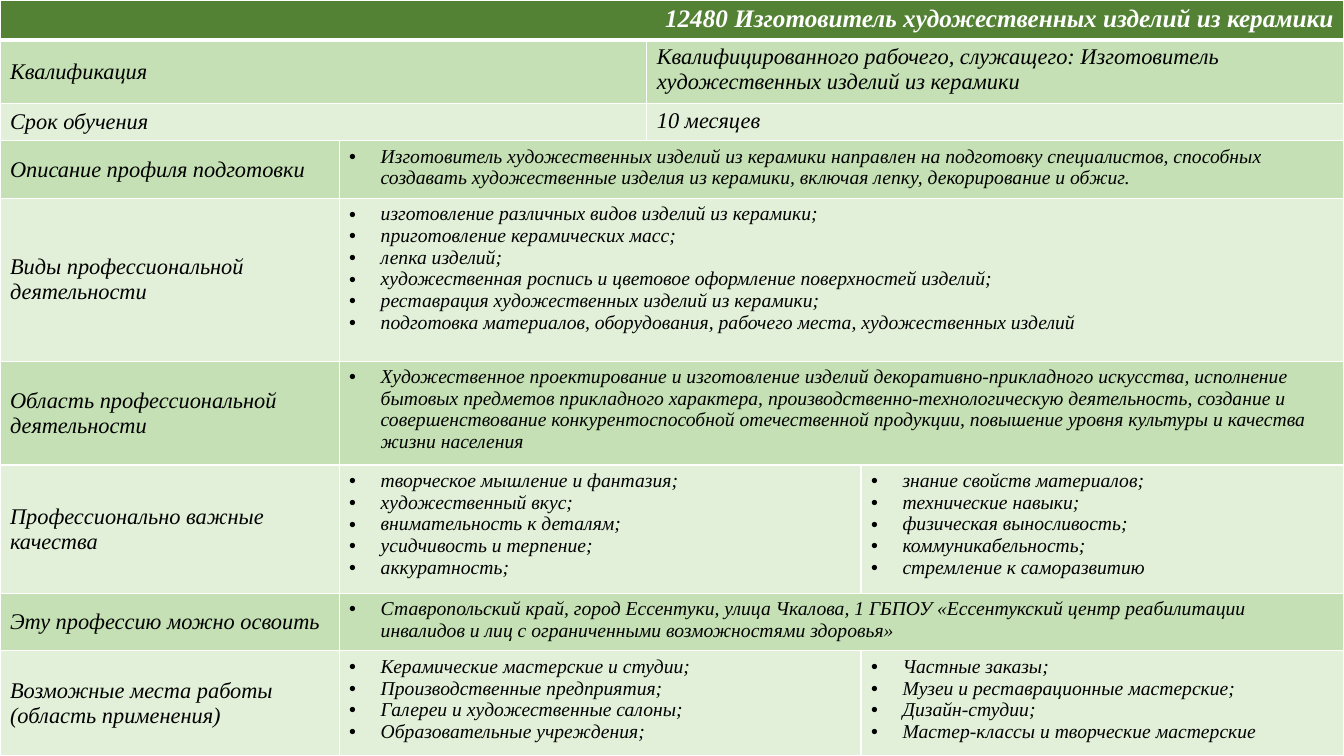
from lxml import etree
from pptx import Presentation
from pptx.dml.color import RGBColor
from pptx.enum.text import MSO_ANCHOR, PP_ALIGN
from pptx.oxml.ns import qn
from pptx.util import Pt

PX = 9525
MIDDLE, TOP = MSO_ANCHOR.MIDDLE, MSO_ANCHOR.TOP
RIGHT, LEFT = PP_ALIGN.RIGHT, PP_ALIGN.LEFT
WHITE = RGBColor(0xFF, 0xFF, 0xFF)
BLACK = RGBColor(0x00, 0x00, 0x00)
DARK_GREEN = RGBColor(0x54, 0x82, 0x35)
MID_GREEN = RGBColor(0xC5, 0xE0, 0xB4)
PALE_GREEN = RGBColor(0xE2, 0xF0, 0xD9)
BULLET_INDENT = 30

COLUMN_WIDTHS = [323, 293, 204, 460]
# Each row: height, then a mapping of starting column to text; a list of texts is bulleted.
ROWS = [
    (38, {0: "12480 Изготовитель художественных изделий из керамики"}),
    (61, {0: "Квалификация",
          2: "Квалифицированного рабочего, служащего: Изготовитель художественных изделий из керамики"}),
    (35, {0: "Срок обучения", 2: "10 месяцев"}),
    (55, {0: "Описание профиля подготовки",
          1: ["Изготовитель художественных изделий из керамики направлен на подготовку специалистов, "
              "способных создавать художественные изделия из керамики, включая лепку, декорирование и обжиг."]}),
    (155, {0: "Виды профессиональной деятельности",
           1: ["изготовление различных видов изделий из керамики;",
               "приготовление керамических масс;",
               "лепка изделий;",
               "художественная роспись и цветовое оформление поверхностей изделий;",
               "реставрация художественных изделий из керамики;",
               "подготовка материалов, оборудования, рабочего места, художественных изделий"]}),
    (99, {0: "Область профессиональной деятельности",
          1: ["Художественное проектирование и изготовление изделий декоративно-прикладного искусства, "
              "исполнение бытовых предметов прикладного характера, производственно-технологическую "
              "деятельность, создание и совершенствование конкурентоспособной отечественной продукции, "
              "повышение уровня культуры и качества жизни населения"]}),
    (122, {0: "Профессионально важные качества",
           1: ["творческое мышление и фантазия;", "художественный вкус;", "внимательность к деталям;",
               "усидчивость и терпение;", "аккуратность;"],
           3: ["знание свойств материалов;", "технические навыки;", "физическая выносливость;",
               "коммуникабельность;", "стремление к саморазвитию"]}),
    (55, {0: "Эту профессию можно освоить",
          1: ["Ставропольский край, город Ессентуки, улица Чкалова, 1 ГБПОУ «Ессентукский центр "
              "реабилитации инвалидов и лиц с ограниченными возможностями здоровья»"]}),
    (100, {0: "Возможные места работы (область применения)",
           1: ["Керамические мастерские и студии;", "Производственные предприятия;",
               "Галереи и художественные салоны;", "Образовательные учреждения;"],
           3: ["Частные заказы;", "Музеи и реставрационные мастерские;", "Дизайн-студии;",
               "Мастер-классы и творческие мастерские"]}),
]


def style_cell(cell, row_index):
    """Draw the white borders, then the fill: the schema wants them in this order."""
    properties = cell._tc.get_or_add_tcPr()
    for side in ("L", "R", "T", "B"):
        thick = (row_index, side) in ((0, "B"), (1, "T"))
        line = etree.SubElement(properties, qn(f"a:ln{side}"), w=str(Pt(3 if thick else 1)))
        line_fill = etree.SubElement(line, qn("a:solidFill"))
        etree.SubElement(line_fill, qn("a:srgbClr"), val=str(WHITE))
    cell.fill.solid()
    if row_index == 0:
        cell.fill.fore_color.rgb = DARK_GREEN
    else:
        cell.fill.fore_color.rgb = MID_GREEN if row_index % 2 else PALE_GREEN


def add_bullet(paragraph):
    properties = paragraph._p.get_or_add_pPr()
    properties.set("marL", str(BULLET_INDENT * PX))
    properties.set("indent", str(-BULLET_INDENT * PX))
    etree.SubElement(properties, qn("a:buFont"), typeface="Arial")
    etree.SubElement(properties, qn("a:buChar"), char="•")


presentation = Presentation()
presentation.slide_width = 1280 * PX
presentation.slide_height = 720 * PX
slide = presentation.slides.add_slide(presentation.slide_layouts[6])

column_count = len(COLUMN_WIDTHS)
table = slide.shapes.add_table(len(ROWS), column_count, 0, 0, 1280 * PX, 720 * PX).table
table.first_row = False
table.horz_banding = False
for column, width in zip(table.columns, COLUMN_WIDTHS):
    column.width = width * PX

for row_index, (height, contents) in enumerate(ROWS):
    table.rows[row_index].height = height * PX
    for column_index in range(column_count):
        style_cell(table.cell(row_index, column_index), row_index)

    is_header = row_index == 0
    starts = list(contents)
    for start, end in zip(starts, starts[1:] + [column_count]):
        cell = table.cell(row_index, start)
        if end - start > 1:
            cell.merge(table.cell(row_index, end - 1))
        cell.vertical_anchor = MIDDLE if start == 0 and not is_header else TOP

        content = contents[start]
        bulleted = isinstance(content, list)
        font_format = {
            "name": "Times New Roman",
            "size": Pt(18 if is_header else 14 if bulleted else 16),
            "bold": is_header,
            "italic": True,
        }
        for index, text in enumerate(content if bulleted else [content]):
            frame = cell.text_frame
            paragraph = frame.add_paragraph() if index else frame.paragraphs[0]
            paragraph.alignment = RIGHT if is_header else LEFT
            if bulleted:
                add_bullet(paragraph)
            run = paragraph.add_run()
            run.text = text
            for attribute, value in font_format.items():
                setattr(run.font, attribute, value)
            run.font.color.rgb = WHITE if is_header else BLACK

presentation.save("out.pptx")
